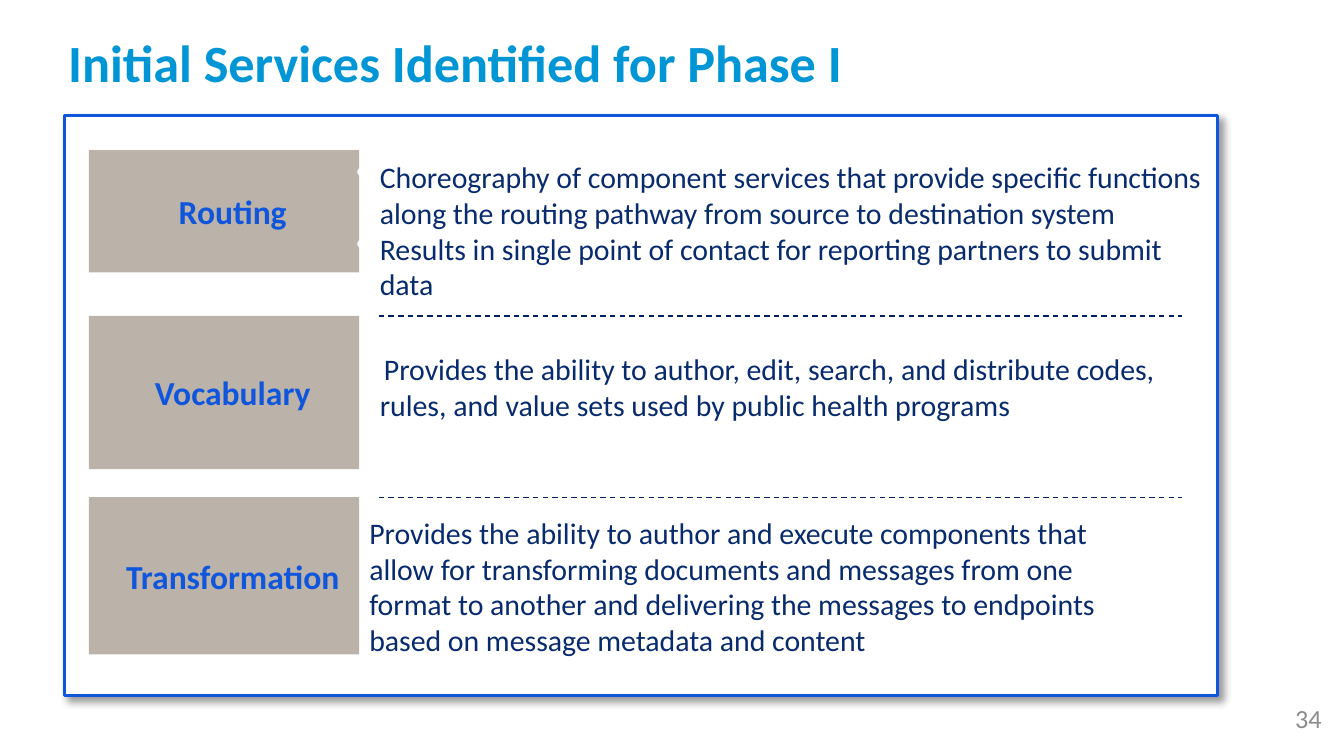
from dataclasses import dataclass

import pptx
import pptx.dml.color
import pptx.enum.dml
import pptx.enum.shapes
import pptx.enum.text
import pptx.oxml
import pptx.oxml.ns
import pptx.shapes.autoshape
import pptx.shapes.base
import pptx.slide
import pptx.text.text
import pptx.util
from pptx.util import Cm

FONT = "Calibri"
COLORS = {
    "white": "FFFFFF",
    "title": "0096D6",
    "blue": "0F56DC",
    "taupe": "BBB3A9",
    "body": "082B6E",
    "rule": "002060",
    "page": "8C8C8C",
    "shadow": "000000",
}
LABEL_LEFT, LABEL_WIDTH = 1.68, 5.11
DESCRIPTION_LEFT = 6.73
RULE_LEFT, RULE_RIGHT = 7.16, 22.33
INDENT = 0.45


@dataclass
class Service:
    name: str
    top: float
    height: float
    text_top: float
    text_width: float
    text_height: float
    details: list[str]
    bullet: str = ""


SERVICES = [
    Service("Routing", 2.84, 2.31, 3.0, 16.05, 5.61, [
        "Choreography of component services that provide specific functions "
        "along the routing pathway from source to destination system",
        "Results in single point of contact for reporting partners to submit data",
    ], "•"),
    Service("Vocabulary", 5.97, 2.9, 6.63, 16.21, 2.9, [
        "Provides the ability to author, edit, search, and distribute codes, "
        "rules, and value sets used by public health programs",
    ], "▪"),
    Service("Transformation", 9.4, 2.97, 9.6, 15.19, 3.0, [
        "Provides the ability to author and execute components that allow for "
        "transforming documents and messages from one format to another and "
        "delivering the messages to endpoints based on message metadata and content",
    ]),
]


def rgb(name: str) -> pptx.dml.color.RGBColor:
    return pptx.dml.color.RGBColor.from_string(COLORS[name])


def add_effects(shape: pptx.shapes.base.BaseShape, content: str = "") -> None:
    namespace = pptx.oxml.ns.nsdecls("a")
    shape._element.spPr.append(
        pptx.oxml.parse_xml(f"<a:effectLst {namespace}>{content}</a:effectLst>"))


def add_run(paragraph: pptx.text.text._Paragraph, text: str, size: float,
            color: str, bold: bool = False) -> None:
    run = paragraph.add_run()
    run.text = text
    run.font.name = FONT
    run.font.size = pptx.util.Pt(size)
    run.font.bold = bold
    run.font.color.rgb = rgb(color)


def set_indent(paragraph: pptx.text.text._Paragraph, left: float, first: float) -> None:
    properties = paragraph._p.get_or_add_pPr()
    properties.set("marL", str(Cm(left)))
    properties.set("indent", str(Cm(first)))


def add_bullet(paragraph: pptx.text.text._Paragraph, character: str) -> None:
    set_indent(paragraph, INDENT, -INDENT)
    namespace = pptx.oxml.ns.nsdecls("a")
    for element in (
        f'<a:buClr {namespace}><a:srgbClr val="{COLORS["white"]}"/></a:buClr>',
        f'<a:buSzPct {namespace} val="125000"/>',
        f'<a:buChar {namespace} char="{character}"/>',
    ):
        paragraph._p.get_or_add_pPr().append(pptx.oxml.parse_xml(element))


def set_margins(frame: pptx.text.text.TextFrame, margin: float) -> None:
    frame.margin_left = frame.margin_right = Cm(margin)
    frame.margin_top = frame.margin_bottom = Cm(margin)


def add_text_frame(slide: pptx.slide.Slide, left: float, top: float,
                   width: float, height: float) -> pptx.text.text.TextFrame:
    frame = slide.shapes.add_textbox(Cm(left), Cm(top), Cm(width), Cm(height)).text_frame
    frame.word_wrap = True
    return frame


def add_rectangle(slide: pptx.slide.Slide, left: float, top: float, width: float,
                  height: float, fill: str) -> pptx.shapes.autoshape.Shape:
    rectangle = slide.shapes.add_shape(
        pptx.enum.shapes.MSO_SHAPE.RECTANGLE, Cm(left), Cm(top), Cm(width), Cm(height))
    rectangle.fill.solid()
    rectangle.fill.fore_color.rgb = rgb(fill)
    rectangle.line.fill.background()
    return rectangle


def add_panel(slide: pptx.slide.Slide) -> None:
    panel = add_rectangle(slide, 1.22, 2.18, 21.79, 10.97, "white")
    panel.line.color.rgb = rgb("blue")
    panel.line.width = pptx.util.Pt(1.5)
    add_effects(panel, (
        f'<a:outerShdw blurRad="{pptx.util.Pt(4)}" dist="{pptx.util.Pt(3)}" '
        f'dir="{45 * 60000}" algn="tl" rotWithShape="0">'
        f'<a:srgbClr val="{COLORS["shadow"]}"><a:alpha val="40000"/></a:srgbClr>'
        '</a:outerShdw>'))


def add_title(slide: pptx.slide.Slide) -> None:
    heading = add_text_frame(slide, 1.04, 0.58, 24.18, 1.93).paragraphs[0]
    heading.line_spacing = pptx.util.Pt(30)
    add_run(heading, "Initial Services Identified for Phase I", 28, "title", True)


def add_service(slide: pptx.slide.Slide, service: Service) -> None:
    label = add_rectangle(
        slide, LABEL_LEFT, service.top, LABEL_WIDTH, service.height, "taupe")
    label.shadow.inherit = False
    label.text_frame.word_wrap = True
    label.text_frame.vertical_anchor = pptx.enum.text.MSO_ANCHOR.MIDDLE
    set_margins(label.text_frame, 0.2)
    name = label.text_frame.paragraphs[0]
    name.alignment = pptx.enum.text.PP_ALIGN.CENTER
    set_indent(name, 0.33, 0)
    add_run(name, service.name, 18, "blue", True)

    description = add_text_frame(slide, DESCRIPTION_LEFT, service.text_top,
                                 service.text_width, service.text_height)
    if service.bullet:
        set_margins(description, 0)
    for index, detail in enumerate(service.details):
        paragraph = description.add_paragraph() if index else description.paragraphs[0]
        if service.bullet:
            add_bullet(paragraph, service.bullet)
        add_run(paragraph, detail, 16, "body")


def add_rule(slide: pptx.slide.Slide, top: float) -> None:
    rule = slide.shapes.add_connector(
        pptx.enum.shapes.MSO_CONNECTOR.STRAIGHT,
        Cm(RULE_LEFT), Cm(top), Cm(RULE_RIGHT), Cm(top))
    rule.line.color.rgb = rgb("rule")
    rule.line.width = pptx.util.Pt(0.75)
    rule.line.dash_style = pptx.enum.dml.MSO_LINE.DASH
    add_effects(rule)


def add_page_number(slide: pptx.slide.Slide) -> None:
    page = add_text_frame(slide, 19.51, 13.16, 5.72, 0.76).paragraphs[0]
    page.alignment = pptx.enum.text.PP_ALIGN.RIGHT
    add_run(page, "34", 14, "page")


def main() -> None:
    presentation = pptx.Presentation()
    presentation.slide_width = Cm(25.4)
    presentation.slide_height = Cm(14.29)
    slide = presentation.slides.add_slide(presentation.slide_layouts[6])
    add_panel(slide)
    add_title(slide)
    for service in SERVICES:
        add_service(slide, service)
    for service in SERVICES[1:]:
        add_rule(slide, service.top)
    add_page_number(slide)
    presentation.save("out.pptx")


if __name__ == "__main__":
    main()
